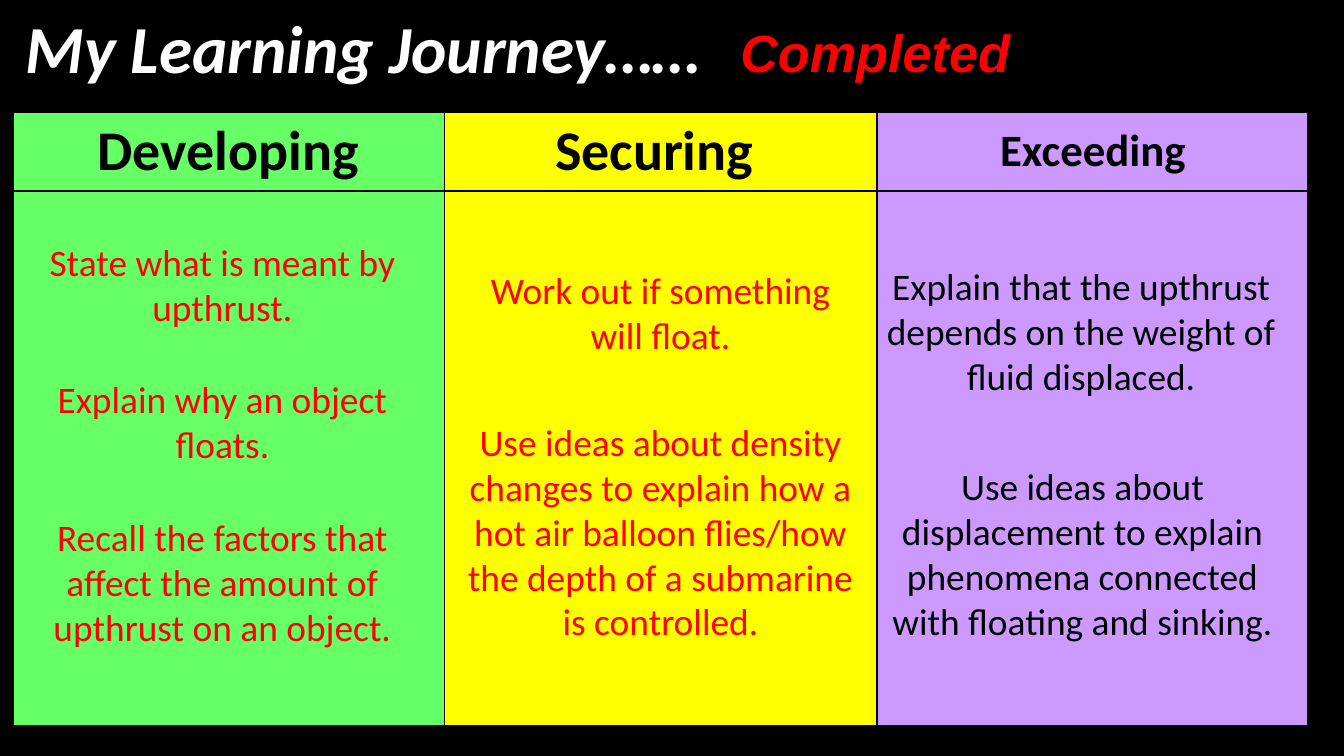
from lxml.etree import SubElement
from pptx import Presentation
from pptx.dml.color import RGBColor
from pptx.enum.text import MSO_ANCHOR, PP_ALIGN
from pptx.oxml.ns import qn
from pptx.util import Inches, Pt

COLORS = {
    "black": "000000", "white": "FFFFFF", "red": "FF0000",
    "green": "66FF66", "yellow": "FFFF00", "purple": "CC99FF",
}

# text, (left, top, width, height), font values
HEADINGS = [
    ("My Learning Journey……", (0.09, 0, 7.18, 1.41),
     {"name": "Calibri", "size": 36, "color": "white", "bold": True, "italic": True}),
    ("Completed", (5.41, 0.1, 2.73, 0.57),
     {"name": "Arial", "size": 28, "color": "red", "bold": True, "italic": True}),
]

# goals: (left, top, height, text)
STAGES = [
    {"title": "Developing", "title_size": 30, "fill": "green",
     "goal_color": "red", "goals": [
         (0.09, 1.73, 0.77, "State what is meant by upthrust."),
         (0.09, 2.75, 0.77, "Explain why an object floats."),
         (0.09, 3.78, 1.11,
          "Recall the factors that affect the amount of upthrust on an object."),
     ]},
    {"title": "Securing ", "title_size": 30, "fill": "yellow",
     "goal_color": "red", "goals": [
         (3.35, 1.94, 0.77, "Work out if something will float."),
         (3.35, 3.07, 1.78,
          "Use ideas about density changes to explain how a hot air balloon "
          "flies/how the depth of a submarine is controlled."),
     ]},
    {"title": "Exceeding", "title_size": 24, "fill": "purple",
     "goal_color": "black", "goals": [
         (6.48, 1.91, 1.11,
          "Explain that the upthrust depends on the weight of fluid displaced."),
         (6.49, 3.4, 1.45,
          "Use ideas about displacement to explain phenomena connected "
          "with floating and sinking."),
     ]},
]
GOAL_WIDTH = 3.13
TABLE_LEFT, TABLE_TOP, TABLE_WIDTH = 0.09, 0.83, 9.65
ROW_HEIGHTS = [0.59, 3.99]
OUTER_LINE, INNER_LINE = 2.25, 1


def rgb(color):
    return RGBColor.from_string(COLORS[color])


def write(frame, text, font, align=None):
    paragraph = frame.paragraphs[0]
    paragraph.alignment = align
    run = paragraph.add_run()
    run.text = text
    run.font.color.rgb = rgb(font["color"])
    run.font.size = Pt(font["size"])
    for key in ("name", "bold", "italic"):
        setattr(run.font, key, font.get(key))


def add_text(slide, text, box, font, align=None):
    frame = slide.shapes.add_textbox(*map(Inches, box)).text_frame
    frame.word_wrap = True
    write(frame, text, font, align)


def add_borders(cell, widths):
    properties = cell._tc.get_or_add_tcPr()
    for side, width in widths.items():
        line = SubElement(properties, qn(f"a:ln{side}"), w=str(Pt(width)))
        fill = SubElement(line, qn("a:solidFill"))
        SubElement(fill, qn("a:srgbClr"), val=COLORS["black"])


def add_stage_table(slide):
    rows, columns = len(ROW_HEIGHTS), len(STAGES)
    table = slide.shapes.add_table(
        rows, columns, Inches(TABLE_LEFT), Inches(TABLE_TOP),
        Inches(TABLE_WIDTH), Inches(sum(ROW_HEIGHTS))).table
    table.first_row = table.horz_banding = False
    for row, height in zip(table.rows, ROW_HEIGHTS):
        row.height = Inches(height)
    margins = {"margin_left": 0.07, "margin_right": 0.07,
               "margin_top": 0.04, "margin_bottom": 0.04}
    for c, stage in enumerate(STAGES):
        for r in range(rows):
            cell = table.cell(r, c)
            on_edge = {"L": c == 0, "R": c == columns - 1,
                       "T": r == 0, "B": r == rows - 1}
            add_borders(cell, {side: OUTER_LINE if edge else INNER_LINE
                               for side, edge in on_edge.items()})
            cell.fill.solid()
            cell.fill.fore_color.rgb = rgb(stage["fill"])
            for key, value in margins.items():
                setattr(cell, key, Inches(value))
        header = table.cell(0, c)
        header.vertical_anchor = MSO_ANCHOR.MIDDLE
        write(header.text_frame, stage["title"],
              {"name": "Calibri", "size": stage["title_size"],
               "color": "black", "bold": True}, PP_ALIGN.CENTER)


def add_goals(slide):
    for stage in STAGES:
        font = {"name": "Calibri", "size": 20, "color": stage["goal_color"]}
        for left, top, height, goal in stage["goals"]:
            add_text(slide, goal, (left, top, GOAL_WIDTH, height),
                     font, PP_ALIGN.CENTER)


def main():
    deck = Presentation()
    deck.slide_width = Inches(10)
    deck.slide_height = deck.slide_width * 9 // 16
    slide = deck.slides.add_slide(deck.slide_layouts[6])
    slide.background.fill.solid()
    slide.background.fill.fore_color.rgb = rgb("black")
    for text, box, font in HEADINGS:
        add_text(slide, text, box, font)
    add_stage_table(slide)
    add_goals(slide)
    deck.save("out.pptx")


if __name__ == "__main__":
    main()
